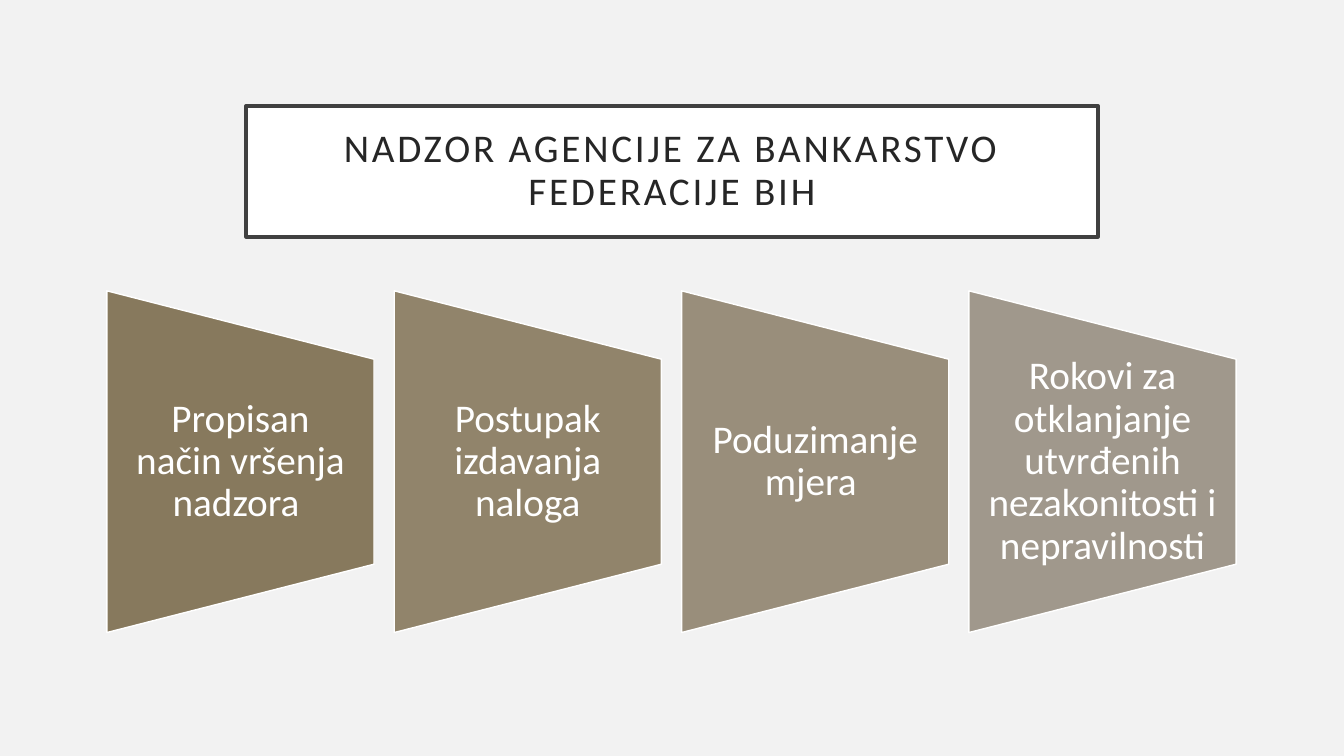
from pptx import Presentation
from pptx.dml.color import RGBColor
from pptx.enum.shapes import MSO_SHAPE
from pptx.enum.text import MSO_ANCHOR, PP_ALIGN
from pptx.util import Inches, Pt

RECTANGLE = MSO_SHAPE.RECTANGLE
TRAPEZOID = MSO_SHAPE.FLOWCHART_MANUAL_OPERATION
MIDDLE = MSO_ANCHOR.MIDDLE
CENTER = PP_ALIGN.CENTER

BACKGROUND = RGBColor(0xF2, 0xF2, 0xF2)
WHITE = RGBColor(0xFF, 0xFF, 0xFF)
FRAME = RGBColor(0x40, 0x40, 0x40)
TITLE_INK = RGBColor(0x26, 0x26, 0x26)

STEPS = [
    ("Propisan način vršenja nadzora ", RGBColor(0x87, 0x79, 0x5D)),
    ("Postupak izdavanja naloga", RGBColor(0x91, 0x84, 0x6B)),
    ("Poduzimanje mjera ", RGBColor(0x99, 0x8E, 0x7B)),
    ("Rokovi za otklanjanje utvrđenih nezakonitosti i nepravilnosti",
     RGBColor(0xA0, 0x98, 0x8C)),
]
FIRST_LEFT, STEP_PITCH = 1.06, 2.85
STEP_WIDTH, STEP_HEIGHT, STEP_MIDDLE = 2.65, 3.39, 4.58
LABEL_HEIGHT = 2.04


class SlideBuilder:
    font_name = "Calibri"
    font_size = Pt(28)

    def __init__(self, slide):
        self.slide = slide
        slide.background.fill.solid()
        slide.background.fill.fore_color.rgb = BACKGROUND

    def shape(self, preset, box, fill, line, line_width, rotation=0):
        shape = self.slide.shapes.add_shape(preset, *map(Inches, box))
        shape.shadow.inherit = False
        shape.rotation = rotation
        shape.fill.solid()
        shape.fill.fore_color.rgb = fill
        shape.line.color.rgb = line
        shape.line.width = Pt(line_width)
        return shape

    def set_text(self, shape, text, color, inset_x, inset_y, spacing=0):
        frame = shape.text_frame
        frame.word_wrap = True
        frame.vertical_anchor = MIDDLE
        frame.margin_left = frame.margin_right = Inches(inset_x)
        frame.margin_top = frame.margin_bottom = Inches(inset_y)
        paragraph = frame.paragraphs[0]
        paragraph.alignment = CENTER
        paragraph.line_spacing = 0.9
        run = paragraph.add_run()
        run.text = text
        paragraph.font.name = self.font_name
        paragraph.font.size = self.font_size
        paragraph.font.color.rgb = color
        if spacing:
            run.font._element.set("spc", str(spacing * 100))

    def title(self, text):
        banner = self.shape(RECTANGLE, (2.44, 1.05, 8.45, 1.3), WHITE, FRAME, 2.5)
        self.set_text(banner, text, TITLE_INK, 0.2, 0.2, spacing=2)

    def step(self, left, text, fill):
        center = left + STEP_WIDTH / 2
        self.shape(
            TRAPEZOID,
            (center - STEP_HEIGHT / 2, STEP_MIDDLE - STEP_WIDTH / 2,
             STEP_HEIGHT, STEP_WIDTH),
            fill, WHITE, 1, rotation=270)
        label = self.slide.shapes.add_textbox(
            Inches(left), Inches(STEP_MIDDLE - LABEL_HEIGHT / 2),
            Inches(STEP_WIDTH), Inches(LABEL_HEIGHT))
        self.set_text(label, text, WHITE, 0.19, 0)


def main():
    presentation = Presentation()
    presentation.slide_width = Inches(13.33)
    presentation.slide_height = Inches(7.5)
    builder = SlideBuilder(
        presentation.slides.add_slide(presentation.slide_layouts[6]))
    builder.title("NADZOR AGENCIJE ZA BANKARSTVO FEDERACIJE BIH")
    for index, (text, fill) in enumerate(STEPS):
        builder.step(FIRST_LEFT + index * STEP_PITCH, text, fill)
    presentation.save("out.pptx")


if __name__ == "__main__":
    main()
